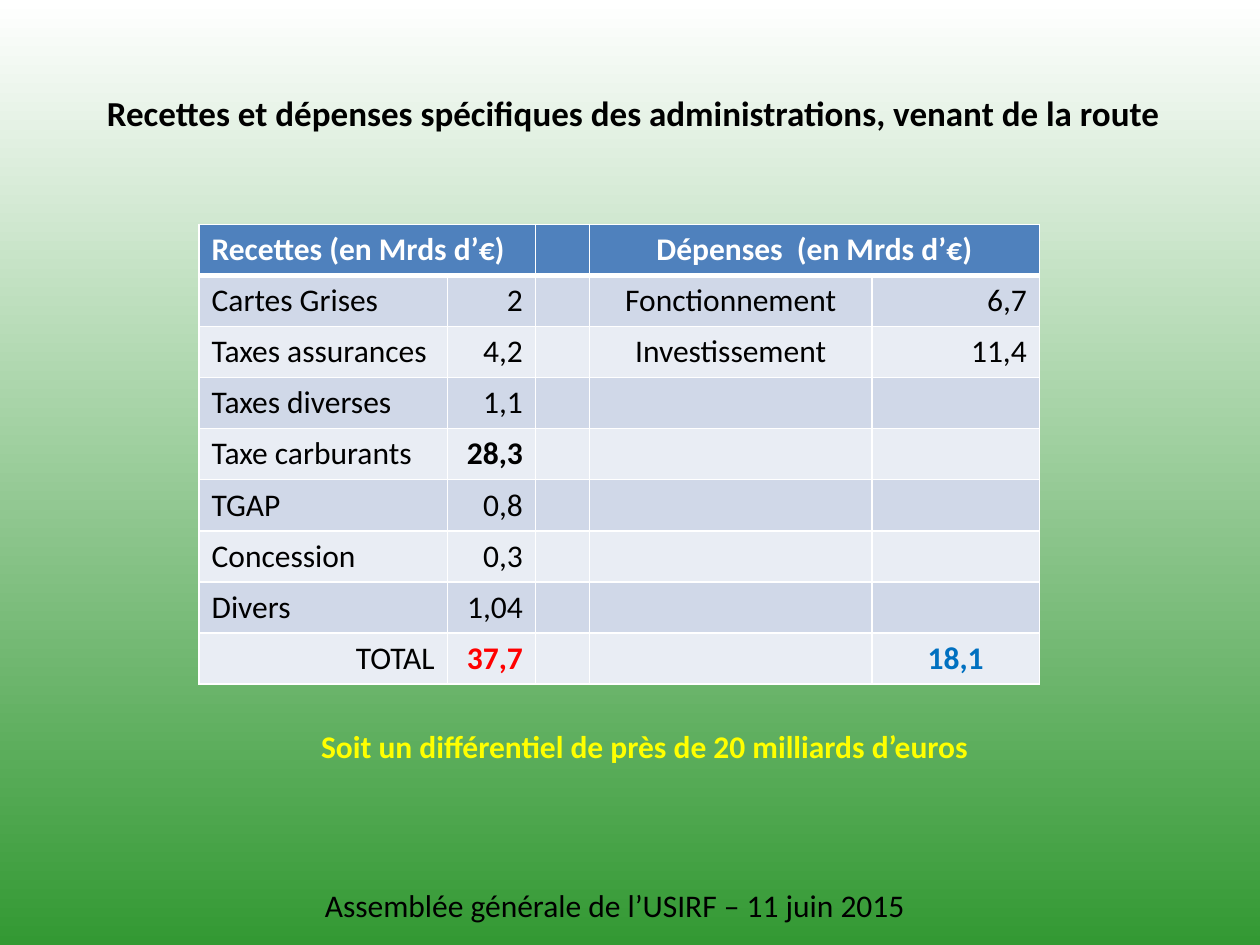
from dataclasses import dataclass

from lxml.etree import SubElement
from pptx import Presentation
from pptx.dml.color import RGBColor
from pptx.enum.text import MSO_AUTO_SIZE, PP_ALIGN
from pptx.oxml.ns import qn
from pptx.util import Inches, Pt


@dataclass(frozen=True)
class Theme:
    font: str = "Calibri"
    title_size: int = 20
    body_size: int = 18
    black: str = "000000"
    white: str = "FFFFFF"
    green: str = "339933"
    yellow: str = "FFFF00"
    header: str = "4F81BD"
    odd_band: str = "D0D8E8"
    even_band: str = "E9EDF4"
    income_total: str = "FF0000"
    expense_total: str = "0070C0"


THEME = Theme()
LEFT, CENTER, RIGHT = PP_ALIGN.LEFT, PP_ALIGN.CENTER, PP_ALIGN.RIGHT

COLUMN_WIDTHS = (1.97, 0.7, 0.43, 2.24, 1.33)
COLUMN_ALIGNMENTS = (LEFT, RIGHT, LEFT, CENTER, RIGHT)
ROWS = (
    ("Recettes (en Mrds d’€)", "", "", "Dépenses  (en Mrds d’€)", ""),
    ("Cartes Grises", "2", "", "Fonctionnement", "6,7"),
    ("Taxes assurances", "4,2", "", "Investissement", "11,4"),
    ("Taxes diverses", "1,1", "", "", ""),
    ("Taxe carburants", "28,3", "", "", ""),
    ("TGAP", "0,8", "", "", ""),
    ("Concession", "0,3", "", "", ""),
    ("Divers", "1,04", "", "", ""),
    ("TOTAL", "37,7", "", "", "18,1"),
)
# (row, column): alignment, colour, bold
SPECIAL_CELLS = {
    (4, 1): (RIGHT, THEME.black, True),
    (8, 0): (RIGHT, THEME.black, False),
    (8, 1): (RIGHT, THEME.income_total, True),
    (8, 4): (CENTER, THEME.expense_total, True),
}


def style_paragraph(paragraph, size, color, bold=False, alignment=LEFT):
    paragraph.alignment = alignment
    font = paragraph.font
    font.name, font.size, font.bold = THEME.font, Pt(size), bold
    font.color.rgb = RGBColor.from_string(color)


def paint_background(slide):
    """Fade from green at the bottom to white at the top."""
    fill = slide.background.fill
    fill.gradient()
    fill.gradient_angle = 90
    for stop, position, color in zip(fill.gradient_stops, (0, 1), (THEME.green, THEME.white)):
        stop.position = position
        stop.color.rgb = RGBColor.from_string(color)


def add_text_line(slide, box, text, size, color, bold=False):
    frame = slide.shapes.add_textbox(*map(Inches, box)).text_frame
    frame.word_wrap = False
    frame.auto_size = MSO_AUTO_SIZE.SHAPE_TO_FIT_TEXT
    frame.text = text
    style_paragraph(frame.paragraphs[0], size, color, bold)


def add_borders(cell, top=1, bottom=1):
    properties = cell._tc.get_or_add_tcPr()
    for tag, width in (("a:lnL", 1), ("a:lnR", 1), ("a:lnT", top), ("a:lnB", bottom)):
        line = SubElement(properties, qn(tag), w=str(Pt(width)))
        SubElement(SubElement(line, qn("a:solidFill")), qn("a:srgbClr"), val=THEME.white)


def format_cell(cell, row, column):
    if row == 0:
        fill = THEME.header
        alignment = CENTER if column == 3 else LEFT
        color, bold = THEME.white, True
    else:
        fill = THEME.odd_band if row % 2 else THEME.even_band
        alignment, color, bold = SPECIAL_CELLS.get(
            (row, column), (COLUMN_ALIGNMENTS[column], THEME.black, False))
    add_borders(cell, top=3 if row == 1 else 1, bottom=3 if row == 0 else 1)
    cell.fill.solid()
    cell.fill.fore_color.rgb = RGBColor.from_string(fill)
    style_paragraph(cell.text_frame.paragraphs[0], THEME.body_size, color, bold, alignment)


def add_budget_table(slide, box):
    frame = slide.shapes.add_table(len(ROWS), len(COLUMN_WIDTHS), *map(Inches, box))
    table = frame.table
    table.first_row = table.horz_banding = False
    for column, width in zip(table.columns, COLUMN_WIDTHS):
        column.width = Inches(width)
    for row, texts in enumerate(ROWS):
        table.rows[row].height = Inches(box[3] / len(ROWS))
        for column, text in enumerate(texts):
            cell = table.cell(row, column)
            cell.text = text
            format_cell(cell, row, column)
    for column in (0, 3):
        table.cell(0, column).merge(table.cell(0, column + 1))


def build_budget_slide(presentation):
    slide = presentation.slides.add_slide(presentation.slide_layouts[6])
    paint_background(slide)
    add_text_line(slide, (2.48, 6.98, 4.86, 0.4),
                  "Assemblée générale de l’USIRF – 11 juin 2015",
                  THEME.body_size, THEME.black)
    add_budget_table(slide, (1.58, 1.78, 6.67, 3.65))
    add_text_line(slide, (2.45, 5.72, 5.45, 0.4),
                  "Soit un différentiel de près de 20 milliards d’euros",
                  THEME.body_size, THEME.yellow, bold=True)
    add_text_line(slide, (0.75, 0.68, 8.64, 0.44),
                  "Recettes et dépenses spécifiques des administrations, venant de la route",
                  THEME.title_size, THEME.black, bold=True)


def main():
    presentation = Presentation()
    presentation.slide_width, presentation.slide_height = Inches(10), Inches(7.5)
    build_budget_slide(presentation)
    presentation.save("out.pptx")


if __name__ == "__main__":
    main()
